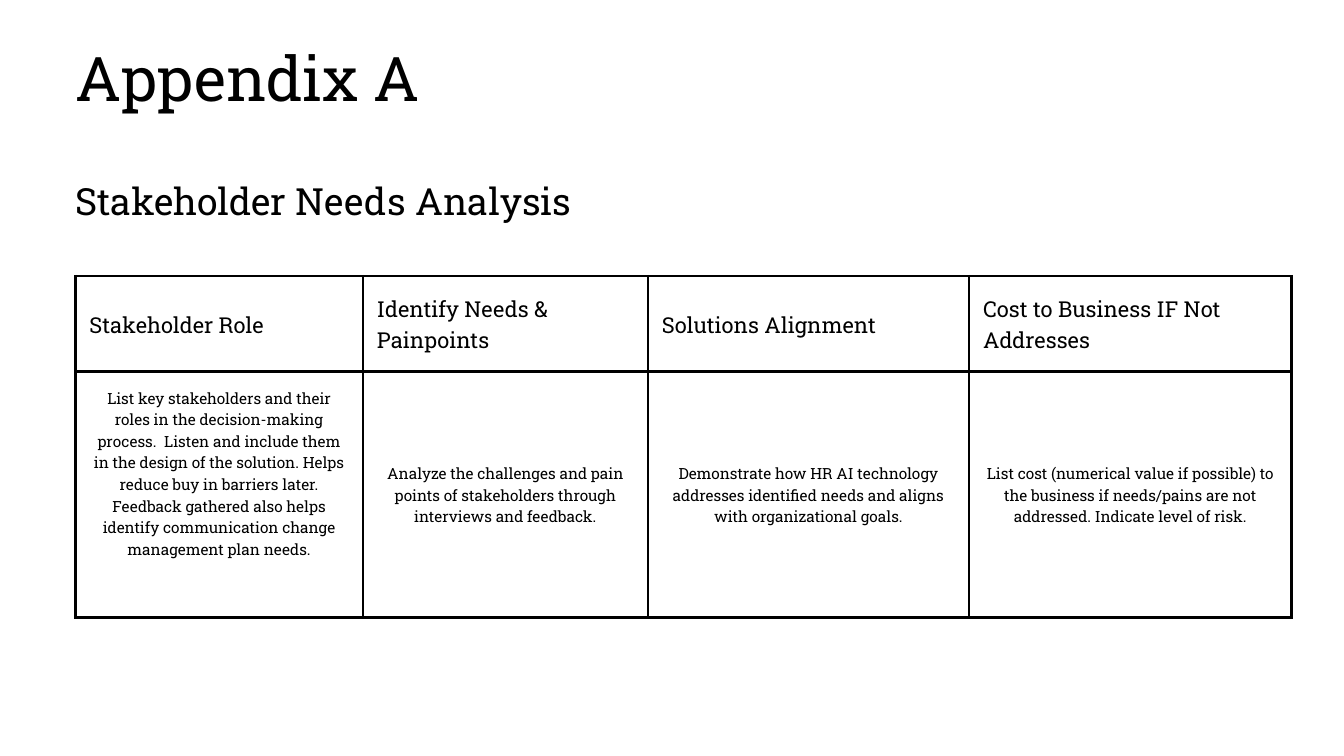
from lxml import etree
from pptx import Presentation
from pptx.dml.color import RGBColor
from pptx.enum.text import MSO_ANCHOR, PP_ALIGN
from pptx.oxml.ns import qn
from pptx.util import Inches, Pt

BLACK = RGBColor(0, 0, 0)
WHITE = RGBColor(255, 255, 255)
FONT = "Roboto Slab"
LEFT, CENTER = PP_ALIGN.LEFT, PP_ALIGN.CENTER
MIDDLE = MSO_ANCHOR.MIDDLE

EDGE = 1.12
PAD = 0.21
COLS = [4.28, 4.24, 4.78, 4.8]
ROWS = [1.42, 3.66]
HEADS = [
    "Stakeholder Role",
    "Identify Needs & Painpoints",
    "Solutions Alignment",
    "Cost to Business IF Not Addresses",
]
NOTES = [
    "List key stakeholders and their roles in the decision-making process.  "
    "Listen and include them in the design of the solution. "
    "Helps reduce buy in barriers later.\n"
    "Feedback gathered also helps identify communication change "
    "management plan needs.",
    "Analyze the challenges and pain points of stakeholders through "
    "interviews and feedback.",
    "Demonstrate how HR AI technology addresses identified needs and "
    "aligns with organizational goals.",
    "List cost (numerical value if possible) to the business if needs/pains "
    "are not addressed. Indicate level of risk.",
]


def write(frame, text, size, lead, align=LEFT):
    """Fill a text frame, one paragraph per line of text."""
    frame.word_wrap = True
    frame.text = text
    for para in frame.paragraphs:
        para.alignment = align
        para.line_spacing = Pt(lead)
        for run in para.runs:
            run.font.name = FONT
            run.font.size = Pt(size)
            run.font.color.rgb = BLACK


def add_label(slide, text, top, width, height, **style):
    box = slide.shapes.add_textbox(
        Inches(EDGE), Inches(top), Inches(width), Inches(height))
    frame = box.text_frame
    frame.margin_left = frame.margin_right = 0
    frame.margin_top = frame.margin_bottom = 0
    write(frame, text, **style)


def add_border(cell, width=3):
    """Draw a solid line on all four sides; lines must precede the fill."""
    props = cell._tc.get_or_add_tcPr()
    for spot, side in enumerate(("lnL", "lnR", "lnT", "lnB")):
        line = etree.Element(qn(f"a:{side}"), w=str(Pt(width)))
        fill = etree.SubElement(line, qn("a:solidFill"))
        etree.SubElement(fill, qn("a:srgbClr"), val=str(BLACK))
        props.insert(spot, line)


def fill_cell(cell, text, **style):
    cell.margin_left = cell.margin_right = Inches(PAD)
    cell.margin_top = cell.margin_bottom = Inches(PAD)
    cell.vertical_anchor = MIDDLE
    cell.fill.solid()
    cell.fill.fore_color.rgb = WHITE
    add_border(cell)
    write(cell.text_frame, text, **style)


def add_grid(slide):
    table = slide.shapes.add_table(
        len(ROWS), len(COLS), Inches(EDGE), Inches(4.11),
        Inches(sum(COLS)), Inches(sum(ROWS))).table
    for row, height in zip(table.rows, ROWS):
        row.height = Inches(height)
    for i, width in enumerate(COLS):
        table.columns[i].width = Inches(width)
        fill_cell(table.cell(0, i), HEADS[i], size=23.5, lead=32.9)
        fill_cell(table.cell(1, i), NOTES[i], size=16.5, lead=23.1,
                  align=CENTER)
    # The longest note sits above the middle of its row.
    table.cell(1, 0).margin_bottom = Inches(0.85)


def main():
    deck = Presentation()
    deck.slide_width, deck.slide_height = Inches(20), Inches(11.25)
    slide = deck.slides.add_slide(deck.slide_layouts[6])
    add_label(slide, "Appendix A", 0.51, 17.05, 1.16, size=66, lead=85.5)
    add_label(slide, "Stakeholder Needs Analysis", 2.59, 9.22, 0.7,
              size=40.1, lead=52)
    add_grid(slide)
    deck.save("out.pptx")


if __name__ == "__main__":
    main()
